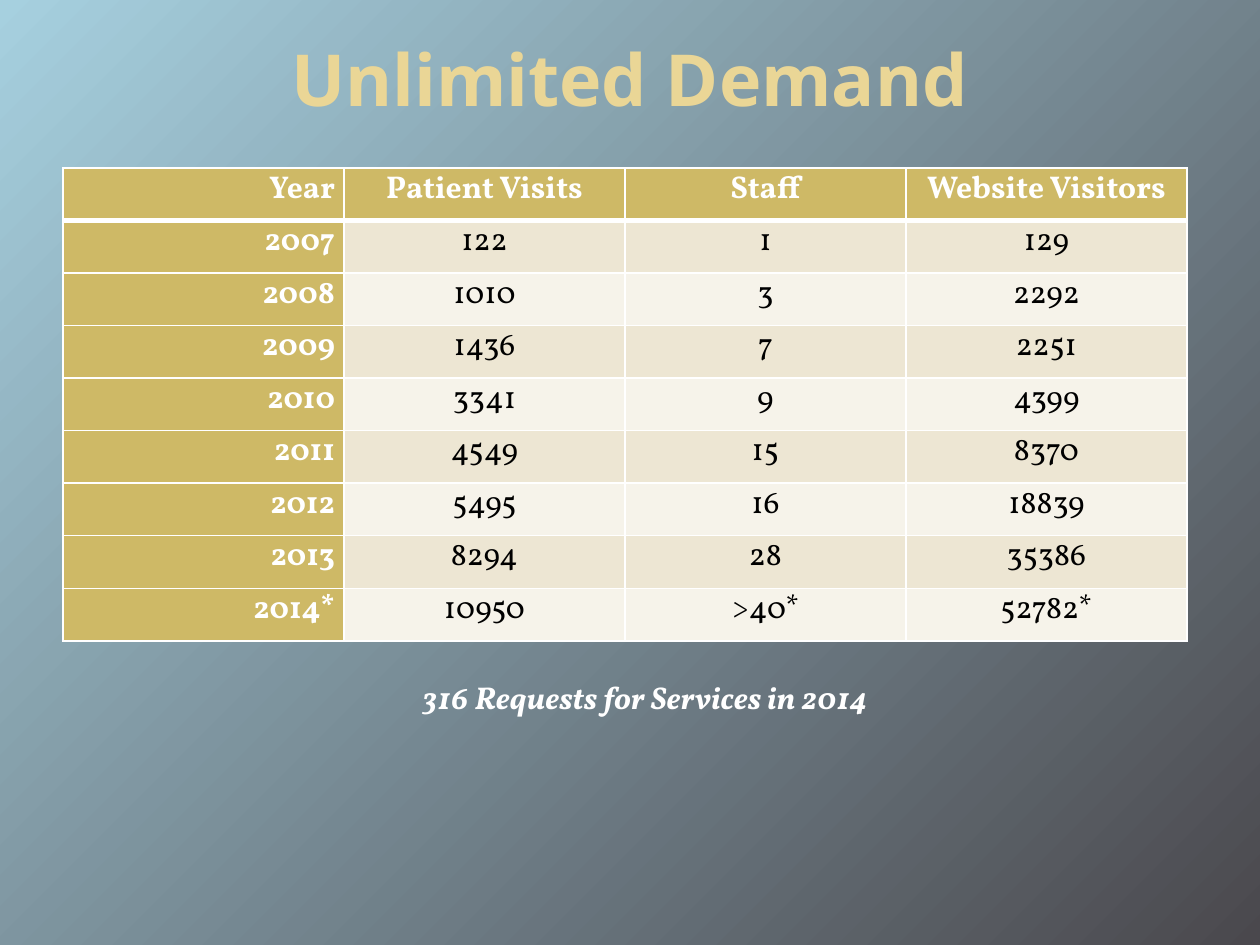
from dataclasses import dataclass
from lxml.etree import SubElement
from pptx import Presentation
from pptx.dml.color import RGBColor as RGB
from pptx.enum.text import MSO_ANCHOR, PP_ALIGN
from pptx.oxml import parse_xml
from pptx.oxml.ns import nsdecls, qn
from pptx.util import Pt

TITLE = "Unlimited Demand"
HEADER = ("Year", "Patient Visits", "Staff", "Website Visitors")
ROWS = [
    ("2007", "122", "1", "129"),
    ("2008", "1010", "3", "2292"),
    ("2009", "1436", "7", "2251"),
    ("2010", "3341", "9", "4399"),
    ("2011", "4549", "15", "8370"),
    ("2012", "5495", "16", "18839"),
    ("2013", "8294", "28", "35386"),
    ("2014*", "10950", ">40*", "52782*"),
]
NOTE = "316 Requests for Services in 2014"

# left, top, width, height in px
SLIDE = (1260, 945)
TITLE_BOX = (63, 10, 1134, 136)
TABLE_BOX = (63, 168, 1124, 473)
NOTE_BOX = (199, 672, 892, 50)
CELL_MARGIN = 9


@dataclass(frozen=True)
class Theme:
    title_font: str = "Open Sans"
    body_font: str = "Vollkorn"
    title_size: int = 41
    body_size: int = 18
    title: str = "EAD696"
    light: str = "FFFFFF"
    dark: str = "000000"
    heading: str = "CEB966"
    bands: tuple = ("EDE6D3", "F6F3EA")
    background: tuple = ("A6D0DF", "4A484D")
    line: int = 1
    header_line: int = 3


THEME = Theme()


def px(n):
    return n * 914400 // 126


def box(rect):
    return [px(n) for n in rect]


def write(tf, text, font, size, color, bold=True, italic=False, align=PP_ALIGN.CENTER):
    tf.text = text
    p = tf.paragraphs[0]
    p.alignment = align
    f = p.runs[0].font
    f.name, f.size, f.bold, f.italic = font, Pt(size), bold, italic
    f.color.rgb = RGB.from_string(color)


def set_borders(cell, widths):
    """Draw left, right, top and bottom borders, widths in points."""
    tcPr = cell._tc.get_or_add_tcPr()
    for i, (side, width) in enumerate(zip("LRTB", widths)):
        ln = parse_xml(f'<a:ln{side} {nsdecls("a")} w="{Pt(width)}"/>')
        fill = SubElement(ln, qn("a:solidFill"))
        SubElement(fill, qn("a:srgbClr"), val=THEME.light)
        tcPr.insert(i, ln)


def format_cell(cell, text, row, col):
    heading = row == 0 or col == 0
    cell.margin_left = cell.margin_right = px(CELL_MARGIN)
    cell.margin_top = cell.margin_bottom = 0
    write(cell.text_frame, text, THEME.body_font, THEME.body_size,
          THEME.light if heading else THEME.dark, bold=heading,
          align=PP_ALIGN.RIGHT if col == 0 else PP_ALIGN.CENTER)
    cell.fill.solid()
    color = THEME.heading if heading else THEME.bands[(row - 1) % 2]
    cell.fill.fore_color.rgb = RGB.from_string(color)
    top = THEME.header_line if row == 1 else THEME.line
    bottom = THEME.header_line if row == 0 else THEME.line
    set_borders(cell, (THEME.line, THEME.line, top, bottom))


def main():
    prs = Presentation()
    prs.slide_width, prs.slide_height = box(SLIDE)
    s = prs.slides.add_slide(prs.slide_layouts[5])

    fill = s.background.fill
    fill.gradient()
    fill.gradient_angle = 315
    for stop, color in zip(fill.gradient_stops, THEME.background):
        stop.color.rgb = RGB.from_string(color)

    title = s.shapes.title
    title.left, title.top, title.width, title.height = box(TITLE_BOX)
    title.text_frame.vertical_anchor = MSO_ANCHOR.MIDDLE
    write(title.text_frame, TITLE, THEME.title_font, THEME.title_size, THEME.title)

    data = [HEADER, *ROWS]
    table = s.shapes.add_table(len(data), len(HEADER), *box(TABLE_BOX)).table
    table.first_col = True
    for r, values in enumerate(data):
        for c, text in enumerate(values):
            format_cell(table.cell(r, c), text, r, c)

    note = s.shapes.add_textbox(*box(NOTE_BOX)).text_frame
    note.word_wrap = True
    write(note, NOTE, THEME.body_font, THEME.body_size, THEME.light, italic=True)

    prs.save("out.pptx")


if __name__ == "__main__":
    main()
